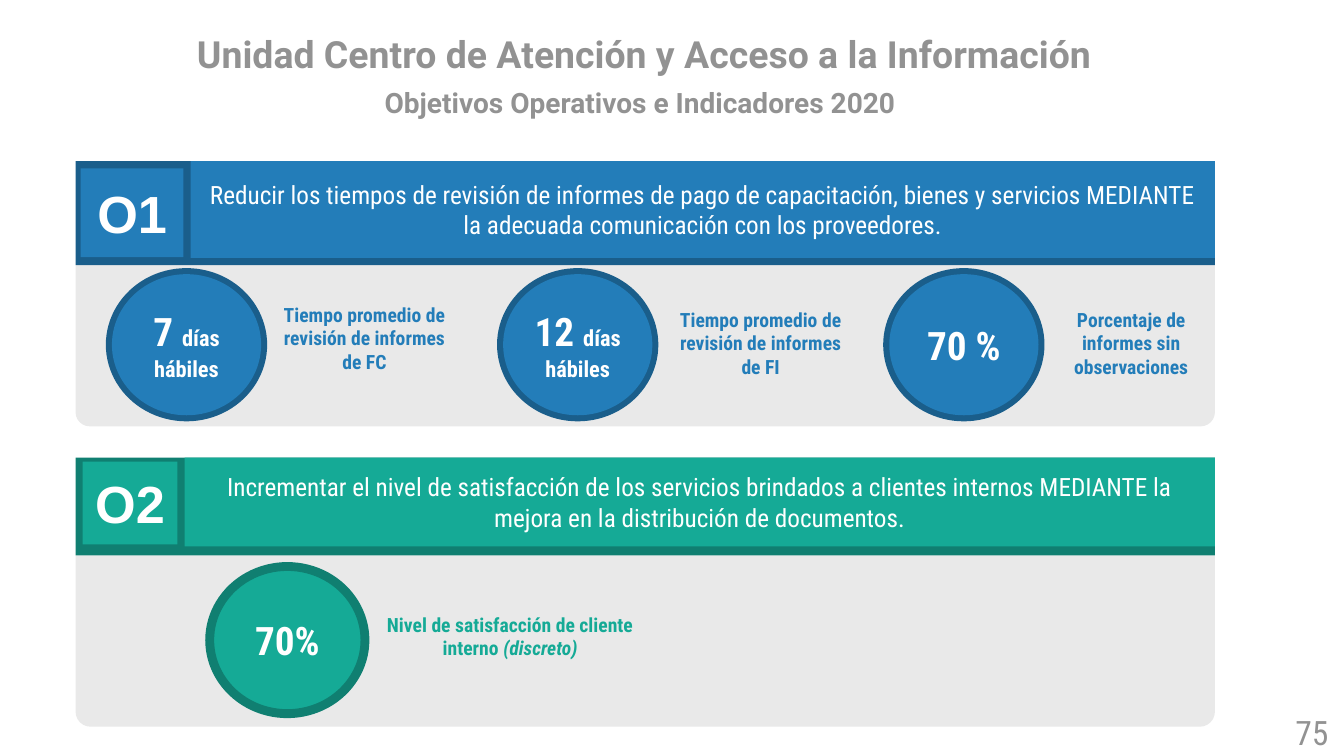
from collections import namedtuple

from pptx import Presentation
from pptx.dml.color import RGBColor
from pptx.enum.shapes import MSO_SHAPE as SHAPE
from pptx.enum.text import MSO_ANCHOR as ANCHOR, PP_ALIGN as ALIGN
from pptx.util import Inches, Pt

WHITE = RGBColor(0xFF, 0xFF, 0xFF)
GRAY = RGBColor(0x92, 0x92, 0x92)
PANEL = RGBColor(0xE9, 0xE9, 0xE9)
BLUE = RGBColor(0x23, 0x7D, 0xB9)
DARK_BLUE = RGBColor(0x1A, 0x5E, 0x8B)
GREEN = RGBColor(0x15, 0xAA, 0x96)
DARK_GREEN = RGBColor(0x10, 0x7F, 0x71)
CONDENSED = "Roboto Condensed"

Box = namedtuple("Box", "x y w h")
Theme = namedtuple("Theme", "fill dark ring")  # ring: circle outline in points


def add_panel(s, kind, box, fill, line=None, line_width=0):
    sp = s.shapes.add_shape(kind, *map(Inches, box))
    sp.shadow.inherit = False
    sp.fill.solid()
    sp.fill.fore_color.rgb = fill
    if line_width:
        sp.line.color.rgb = line
        sp.line.width = Pt(line_width)
    else:
        sp.line.fill.background()
    return sp


def add_text_box(s, box, inset=0):
    sp = s.shapes.add_textbox(*map(Inches, box))
    tf = sp.text_frame
    tf.margin_left = tf.margin_right = Inches(2 * inset)
    tf.margin_top = tf.margin_bottom = Inches(inset)
    return sp


def write(sp, paragraphs, color, font=CONDENSED, bold=True, anchor=ANCHOR.MIDDLE, align=ALIGN.CENTER):
    """Fill a shape with paragraphs, each a list of (text, size) runs."""
    tf = sp.text_frame
    tf.word_wrap = True
    tf.vertical_anchor = anchor
    for i, runs in enumerate(paragraphs):
        p = tf.add_paragraph() if i else tf.paragraphs[0]
        p.alignment = align
        p.font.name, p.font.bold, p.font.color.rgb = font, bold, color
        for text, size in runs:
            r = p.add_run()
            r.text = text
            r.font.size = Pt(size)
    return tf


def add_heading(s, box):
    write(add_text_box(s, box, 0.05),
          [[("Unidad Centro de Atención y Acceso a la Información", 26.7)],
           [("Objetivos Operativos e Indicadores 2020", 20), (" ", 26.7)]],
          GRAY, "Roboto", anchor=ANCHOR.TOP)


def add_objective(s, box, theme, header_h, lip, code, code_box, goal_x, goal):
    """Header band with code and goal above a gray panel with round lower corners."""
    x, y, w, h = box
    body = add_panel(s, SHAPE.ROUND_2_SAME_RECTANGLE, Box(x, y + header_h, w, h - header_h), PANEL)
    body.adjustments[0], body.adjustments[1] = 0, 0.088
    add_panel(s, SHAPE.RECTANGLE, Box(x, y, w, header_h), theme.dark)
    banner = add_panel(s, SHAPE.RECTANGLE, Box(x + goal_x, y, w - goal_x, header_h - lip), theme.fill)
    write(banner, [[(goal, 18)]], WHITE, bold=False)
    dx, dy, code_w, code_h = code_box
    tile = add_panel(s, SHAPE.RECTANGLE, Box(x + dx, y + dy, code_w, code_h), theme.fill)
    write(tile, [[(code, 37.3)]], WHITE, "Arial")


def add_indicator(s, x, y, theme, target, label_box, label):
    """Ringed circle with its target, and the label beside it."""
    add_panel(s, SHAPE.OVAL, Box(x, y, 1.6, 1.52), theme.dark, theme.dark, theme.ring)
    add_panel(s, SHAPE.OVAL, Box(x + 0.06, y + 0.06, 1.48, 1.4), theme.fill, theme.dark, theme.ring)
    write(add_text_box(s, Box(x + 0.13, y + 0.39, 1.34, 0.74)), [target], WHITE)
    tf = write(add_text_box(s, label_box), [[(text, 14) for text in label]], theme.fill,
               anchor=ANCHOR.TOP)
    for r in tf.paragraphs[0].runs[1:]:
        r.font.italic = True


def add_page_number(s, box):
    write(add_text_box(s, box, 0.05), [[("75", 24)]], GRAY, bold=False,
          anchor=ANCHOR.TOP, align=ALIGN.LEFT)


def main():
    prs = Presentation()
    prs.slide_width, prs.slide_height = Inches(13.33), Inches(7.5)
    s = prs.slides.add_slide(prs.slide_layouts[6])
    blue, green = Theme(BLUE, DARK_BLUE, 0), Theme(GREEN, DARK_GREEN, 2)

    add_heading(s, Box(1.08, 0.26, 10.63, 0.97))
    add_objective(s, Box(0.75, 1.6, 11.3, 2.63), blue, 1.03, 0.07, "O1",
                  Box(0.05, 0.07, 1.02, 0.88), 1.14,
                  "Reducir los tiempos de revisión de informes de pago de capacitación, bienes y "
                  "servicios MEDIANTE la adecuada comunicación con los proveedores.")
    add_objective(s, Box(0.75, 4.54, 11.3, 2.67), green, 0.97, 0.09, "O2",
                  Box(0.07, 0.04, 0.94, 0.82), 1.08,
                  "Incrementar el nivel de satisfacción de los servicios brindados a clientes "
                  "internos MEDIANTE la mejora en la distribución de documentos.")

    indicators = [
        (1.05, 2.66, blue, [("7 ", 28), ("días hábiles", 16)], Box(2.79, 3, 1.65, 0.71),
         ["Tiempo promedio de revisión de informes de FC"]),
        (4.93, 2.66, blue, [("12 ", 28), ("días hábiles", 16)], Box(6.71, 3.05, 1.67, 0.71),
         ["Tiempo promedio de revisión de informes de FI"]),
        (8.76, 2.66, blue, [("70 %", 28)], Box(10.35, 3.05, 1.74, 0.71),
         ["Porcentaje de informes sin observaciones"]),
        (2.05, 5.59, green, [("70%", 28)], Box(3.75, 6.08, 2.62, 0.47),
         ["Nivel de satisfacción de cliente interno ", "(discreto)"]),
    ]
    for indicator in indicators:
        add_indicator(s, *indicator)
    add_page_number(s, Box(12.75, 7.01, 0.56, 0.4))
    prs.save("out.pptx")


if __name__ == "__main__":
    main()
